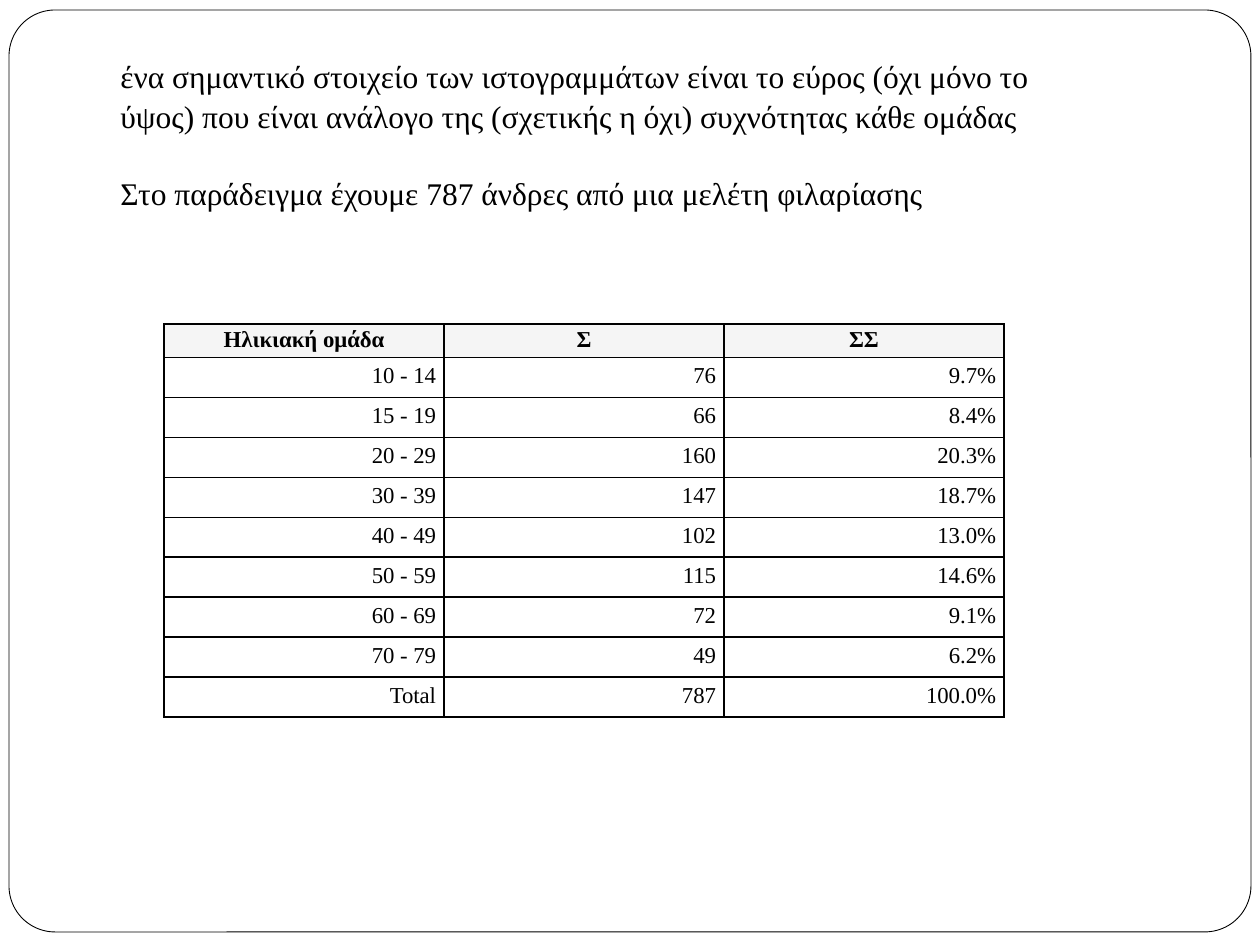
from lxml.etree import SubElement
from pptx import Presentation
from pptx.dml.color import RGBColor
from pptx.enum.shapes import MSO_SHAPE
from pptx.enum.text import PP_ALIGN
from pptx.oxml.ns import qn
from pptx.util import Emu, Pt

PX = 914400 // 126
FONT = "Times New Roman"
COLORS = {"ink": "000000", "paper": "FFFFFF", "header": "F5F5F5"}

INTRO = [
    "ένα σημαντικό στοιχείο των ιστογραμμάτων είναι το εύρος (όχι μόνο το ύψος) "
    "που είναι ανάλογο της (σχετικής η όχι) συχνότητας κάθε ομάδας",
    "Στο παράδειγμα έχουμε 787 άνδρες από μια μελέτη φιλαρίασης",
]
HEADINGS = ("Ηλικιακή ομάδα", "Σ", "ΣΣ")
AGE_GROUPS = [
    ("10 - 14", "76", "9.7%"),
    ("15 - 19", "66", "8.4%"),
    ("20 - 29", "160", "20.3%"),
    ("30 - 39", "147", "18.7%"),
    ("40 - 49", "102", "13.0%"),
    ("50 - 59", "115", "14.6%"),
    ("60 - 69", "72", "9.1%"),
    ("70 - 79", "49", "6.2%"),
    ("Total", "787", "100.0%"),
]


def px(length):
    return Emu(length * PX)


def color(name):
    return RGBColor.from_string(COLORS[name])


def add_run(paragraph, text, size, bold=False):
    run = paragraph.add_run()
    run.text = text
    run.font.name = FONT
    run.font.size = Pt(size)
    run.font.bold = bold
    run.font.color.rgb = color("ink")


def add_frame(slide, left, top, width, height):
    frame = slide.shapes.add_shape(
        MSO_SHAPE.ROUNDED_RECTANGLE, px(left), px(top), px(width), px(height))
    frame.adjustments[0] = 0.05
    frame.shadow.inherit = False
    frame.fill.solid()
    frame.fill.fore_color.rgb = color("paper")
    frame.line.color.rgb = color("ink")
    frame.line.width = Pt(0.5)


def add_intro(slide, left, top, width, height):
    intro = slide.shapes.add_textbox(px(left), px(top), px(width), px(height)).text_frame
    intro.word_wrap = True
    for index, text in enumerate(INTRO):
        paragraph = intro.add_paragraph() if index else intro.paragraphs[0]
        paragraph.line_spacing = 1.05
        if index:
            paragraph.space_before = px(38)
        add_run(paragraph, text, 18)


def add_borders(cell):
    properties = cell._tc.get_or_add_tcPr()
    for side in ("a:lnL", "a:lnR", "a:lnT", "a:lnB"):
        border = SubElement(properties, qn(side), w=str(Pt(1)))
        fill = SubElement(border, qn("a:solidFill"))
        SubElement(fill, qn("a:srgbClr"), val=COLORS["ink"])


def fill_cell(cell, text, is_header):
    side_inset, end_inset = (3, 3) if is_header else (8, 6)
    cell.margin_left = cell.margin_right = px(side_inset)
    cell.margin_top = cell.margin_bottom = px(end_inset)
    add_borders(cell)
    cell.fill.solid()
    cell.fill.fore_color.rgb = color("header" if is_header else "paper")
    paragraph = cell.text_frame.paragraphs[0]
    paragraph.alignment = PP_ALIGN.CENTER if is_header else PP_ALIGN.RIGHT
    add_run(paragraph, text, 13, is_header)


def add_frequency_table(slide, left, top, width, header_height, row_height):
    rows = [HEADINGS, *AGE_GROUPS]
    height = header_height + row_height * len(AGE_GROUPS)
    table = slide.shapes.add_table(
        len(rows), len(HEADINGS), px(left), px(top), px(width), px(height)).table
    table.first_row = table.horz_banding = False
    for column in table.columns:
        column.width = px(width // len(HEADINGS))
    for index, values in enumerate(rows):
        is_header = index == 0
        table.rows[index].height = px(header_height if is_header else row_height)
        for cell, text in zip(table.rows[index].cells, values):
            fill_cell(cell, text, is_header)


def main():
    presentation = Presentation()
    presentation.slide_width = px(1260)
    presentation.slide_height = px(945)
    slide = presentation.slides.add_slide(presentation.slide_layouts[6])
    add_frame(slide, 9, 10, 1242, 922)
    add_intro(slide, 108, 49, 994, 204)
    add_frequency_table(slide, 164, 324, 840, 33, 40)
    presentation.save("out.pptx")


if __name__ == "__main__":
    main()
